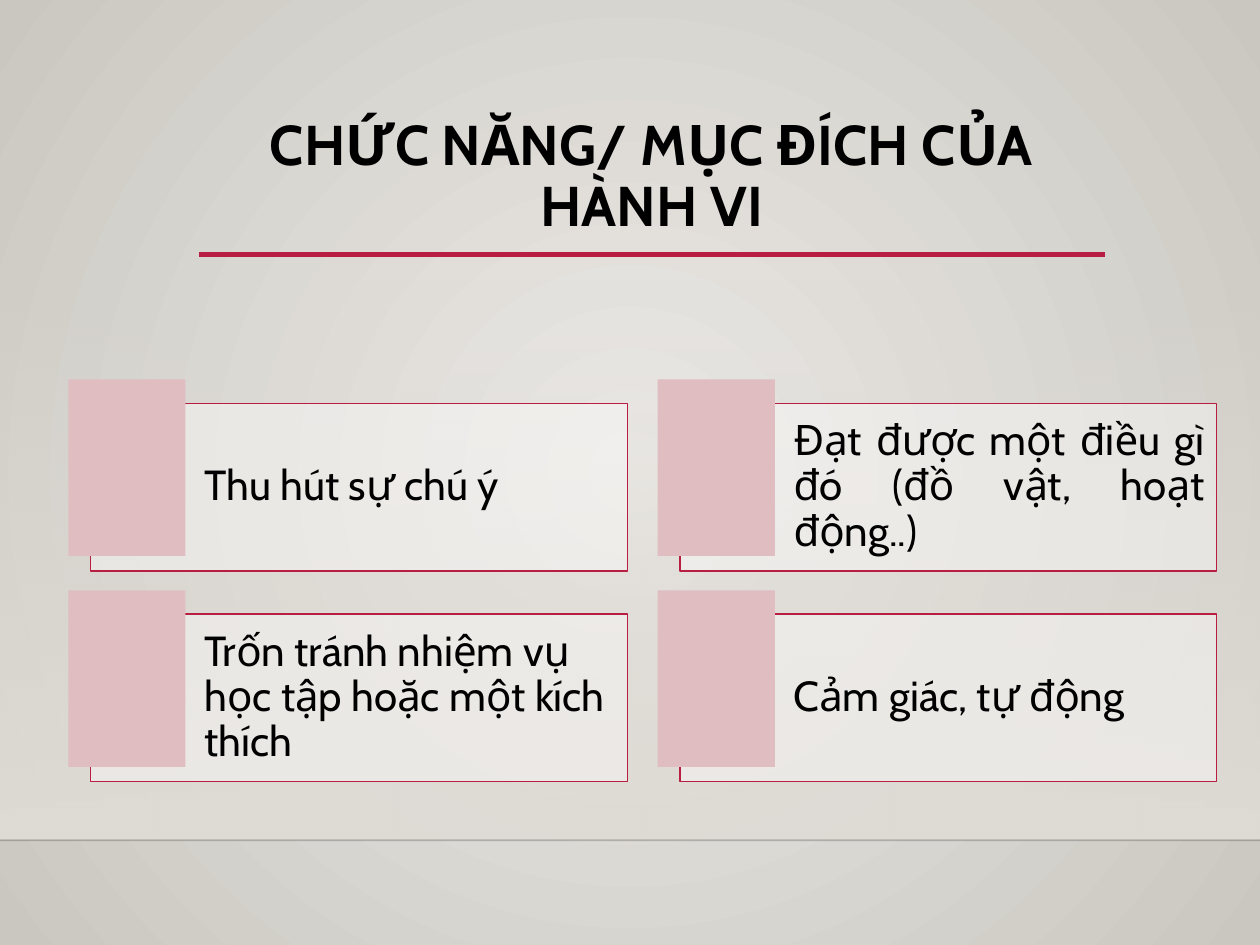
from dataclasses import dataclass

from lxml.etree import SubElement
from pptx import Presentation
from pptx.dml.color import RGBColor
from pptx.enum.shapes import MSO_CONNECTOR, MSO_SHAPE
from pptx.enum.text import MSO_ANCHOR, PP_ALIGN
from pptx.oxml.ns import qn
from pptx.util import Cm, Pt


@dataclass(frozen=True)
class Theme:
    font: str = "Cabin"
    text: str = "000000"
    accent: str = "B71E42"
    block: str = "DFBDC0"
    panel: str = "FFFFFF"
    floor: str = "DFDBD5"
    floor_line: str = "000001"
    glow: str = "ECEAE7"
    edge: str = "CAC7C1"
    title_size: int = 32
    body_size: int = 24


THEME = Theme()
TITLE = "CHỨC NĂNG/ MỤC ĐÍCH CỦA HÀNH VI"
PURPOSES = [
    ("Thu hút sự chú ý", PP_ALIGN.LEFT),
    ("Đạt được một điều gì đó (đồ vật, hoạt động..)", PP_ALIGN.JUSTIFY),
    ("Trốn tránh nhiệm vụ học tập hoặc một kích thích", PP_ALIGN.LEFT),
    ("Cảm giác, tự động", PP_ALIGN.LEFT),
]


def apply(obj, values):
    for name, value in values.items():
        setattr(obj, name, value)


def rgb(color):
    return RGBColor.from_string(color)


def set_opacity(color_parent, percent):
    for clr in color_parent.iter(qn("a:srgbClr")):
        SubElement(clr, qn("a:alpha"), val=str(percent * 1000))


def set_gradient(grad, stops):
    for child in list(grad):
        grad.remove(child)
    gs_list = SubElement(grad, qn("a:gsLst"))
    for pos, color, opacity in stops:
        gs = SubElement(gs_list, qn("a:gs"), pos=str(pos * 1000))
        SubElement(gs, qn("a:srgbClr"), val=color)
        set_opacity(gs, opacity)


def add_background(s):
    s.background.fill.gradient()
    grad = s._element.xpath(".//p:bgPr/a:gradFill")[0]
    set_gradient(grad, [(0, THEME.glow, 100), (100, THEME.edge, 100)])
    circle = SubElement(grad, qn("a:path"), path="circle")
    SubElement(circle, qn("a:fillToRect"), l="50000", t="50000", r="50000", b="50000")


def add_rect(s, left, top, width, height, color):
    sp = s.shapes.add_shape(MSO_SHAPE.RECTANGLE, Cm(left), Cm(top), Cm(width), Cm(height))
    sp.shadow.inherit = False
    sp.fill.solid()
    sp.fill.fore_color.rgb = rgb(color)
    sp.line.fill.background()
    return sp


def add_floor(s):
    sp = add_rect(s, 0, 5.59, 25.4, 11.33, THEME.floor)
    sp.fill.gradient()
    grad = sp._element.spPr.find(qn("a:gradFill"))
    set_gradient(grad, [(0, THEME.floor, 0), (100, THEME.floor, 100)])
    SubElement(grad, qn("a:lin"), ang="5400000", scaled="0")


def add_rule(s, left, right, y, color, width, opacity=100):
    line = s.shapes.add_connector(MSO_CONNECTOR.STRAIGHT, Cm(left), Cm(y), Cm(right), Cm(y))
    line.line.color.rgb = rgb(color)
    line.line.width = Pt(width)
    spPr = line._element.spPr
    if opacity < 100:
        set_opacity(spPr, opacity)
    SubElement(spPr, qn("a:effectLst"))


def write_text(tf, text, size, align, bold=False):
    p = tf.paragraphs[0]
    apply(p, {"alignment": align, "line_spacing": 0.9, "space_before": Pt(0)})
    r = p.add_run()
    r.text = text
    apply(r.font, {"name": THEME.font, "size": Pt(size), "bold": bold})
    r.font.color.rgb = rgb(THEME.text)


def add_title(s):
    title = s.shapes.title
    apply(title, {"left": Cm(4.01), "top": Cm(2.24), "width": Cm(18.26), "height": Cm(2.92)})
    tf = title.text_frame
    apply(tf, {"word_wrap": True, "vertical_anchor": MSO_ANCHOR.TOP})
    write_text(tf, TITLE, THEME.title_size, PP_ALIGN.CENTER, bold=True)


def add_purpose(s, left, top, text, align):
    panel = add_rect(s, left, top, 10.82, 3.38, THEME.panel)
    set_opacity(panel._element.spPr, 40)
    panel.line.color.rgb = rgb(THEME.accent)
    panel.line.width = Pt(0.75)
    tf = panel.text_frame
    apply(tf, {
        "word_wrap": True, "vertical_anchor": MSO_ANCHOR.MIDDLE,
        "margin_left": Cm(2.29), "margin_right": Cm(0.25),
        "margin_top": Cm(0.25), "margin_bottom": Cm(0.25),
    })
    write_text(tf, text, THEME.body_size, align)
    add_rect(s, left - 0.45, top - 0.48, 2.36, 3.56, THEME.block)


def main():
    prs = Presentation()
    apply(prs, {"slide_width": Cm(25.4), "slide_height": Cm(19.05)})
    s = prs.slides.add_slide(prs.slide_layouts[5])
    add_background(s)
    add_floor(s)
    add_rule(s, 0, 25.4, 16.94, THEME.floor_line, 1, opacity=20)
    add_rule(s, 4.01, 22.27, 5.13, THEME.accent, 2.5)
    add_title(s)
    for i, (text, align) in enumerate(PURPOSES):
        row, col = divmod(i, 2)
        add_purpose(s, 1.83 + col * 11.88, 8.13 + row * 4.25, text, align)
    prs.save("out.pptx")


if __name__ == "__main__":
    main()
